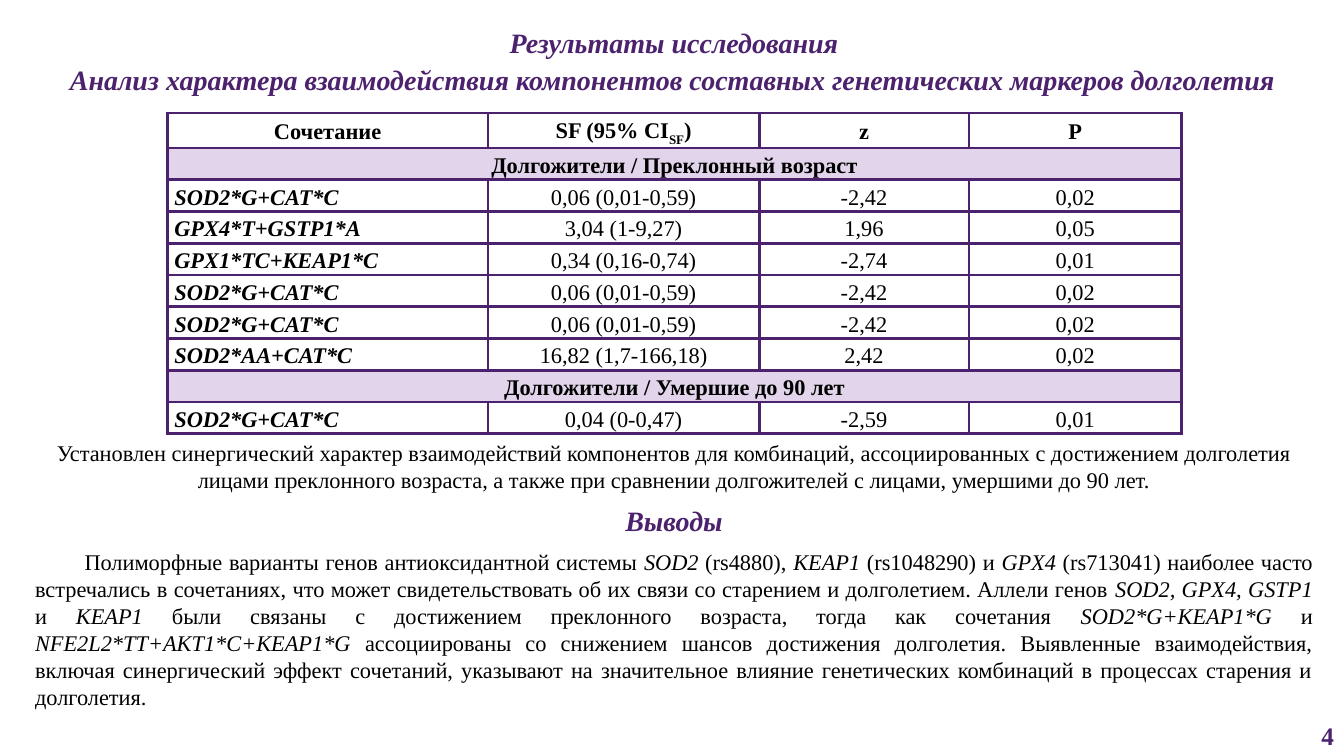
from itertools import cycle

from lxml import etree
from pptx import Presentation
from pptx.dml.color import RGBColor
from pptx.enum import text as t
from pptx.oxml import ns
from pptx.util import Inches, Pt

COLORS = {"accent": "4C216D", "band": "70319F", "ink": "000000"}
FONT = "Times New Roman"
CENTER, LEFT, RIGHT, JUSTIFY = (
    t.PP_ALIGN.CENTER, t.PP_ALIGN.LEFT, t.PP_ALIGN.RIGHT, t.PP_ALIGN.JUSTIFY)
TOP, MIDDLE = t.MSO_ANCHOR.TOP, t.MSO_ANCHOR.MIDDLE

MARGIN, BODY_WIDTH = 0.25, 12.87
COLUMN_WIDTHS = [3.18, 2.69, 2.08, 2.11]
ROW_HEIGHT = 0.315
BORDER_WIDTH = 2.25

HEADER = ["Сочетание", "SF (95% CI", "z", "P"]
GROUPS = [
    ("Долгожители / Преклонный возраст", [
        ("SOD2*G+CAT*C", "0,06 (0,01-0,59)", "-2,42", "0,02"),
        ("GPX4*T+GSTP1*A", "3,04 (1-9,27)", "1,96", "0,05"),
        ("GPX1*TC+KEAP1*C", "0,34 (0,16-0,74)", "-2,74", "0,01"),
        ("SOD2*G+CAT*C", "0,06 (0,01-0,59)", "-2,42", "0,02"),
        ("SOD2*G+CAT*C", "0,06 (0,01-0,59)", "-2,42", "0,02"),
        ("SOD2*AA+CAT*C", "16,82 (1,7-166,18)", "2,42", "0,02"),
    ]),
    ("Долгожители / Умершие до 90 лет", [
        ("SOD2*G+CAT*C", "0,04 (0-0,47)", "-2,59", "0,01"),
    ]),
]

SYNERGY = ("Установлен синергический характер взаимодействий компонентов для "
           "комбинаций, ассоциированных с достижением долголетия лицами "
           "преклонного возраста, а также при сравнении долгожителей с лицами, "
           "умершими до 90 лет.")

# Upright and italic pieces alternate
CONCLUSIONS = [
    "Полиморфные варианты генов антиоксидантной системы ", "SOD2",
    " (rs4880), ", "KEAP1", " (rs1048290) и ", "GPX4",
    " (rs713041) наиболее часто встречались в сочетаниях, что может "
    "свидетельствовать об их связи со старением и долголетием. Аллели генов ",
    "SOD2, GPX4, GSTP1 ", "и", " KEAP1",
    " были связаны с достижением преклонного возраста, тогда как сочетания ",
    "SOD2*G+KEAP1*G ", "и", " NFE2L2*TT+AKT1*C+KEAP1*G",
    " ассоциированы со снижением шансов достижения долголетия. Выявленные "
    "взаимодействия, включая синергический эффект сочетаний, указывают на "
    "значительное влияние генетических комбинаций в процессах старения и "
    "долголетия. ",
]


def add_run(paragraph, words, size=16, color="ink", bold=False, italic=False):
    run = paragraph.add_run()
    run.text = words
    font = run.font
    font.name, font.size, font.bold, font.italic = FONT, Pt(size), bold, italic
    font.color.rgb = RGBColor.from_string(COLORS[color])
    return run


def add_text_area(slide, box, align, anchor=TOP):
    frame = slide.shapes.add_textbox(*map(Inches, box)).text_frame
    frame.word_wrap = True
    frame.vertical_anchor = anchor
    paragraph = frame.paragraphs[0]
    paragraph.alignment = align
    return paragraph


def add_heading(slide, box, words, anchor=MIDDLE, spacing=0.9):
    heading = add_text_area(slide, box, CENTER, anchor)
    heading.line_spacing = spacing
    add_run(heading, words, 20, "accent", bold=True, italic=True)


def style_cell(cell, banded):
    cell.margin_left = cell.margin_right = Inches(0.07)
    cell.margin_top = cell.margin_bottom = 0
    cell.vertical_anchor = MIDDLE
    properties = cell._tc.get_or_add_tcPr()
    if banded:
        cell.fill.solid()
        cell.fill.fore_color.rgb = RGBColor.from_string(COLORS["band"])
        tint = properties.find(".//" + ns.qn("a:srgbClr"))
        etree.SubElement(tint, ns.qn("a:alpha"), val="20000")
    else:
        cell.fill.background()
    # Borders come before the fill
    for position, side in enumerate(("lnL", "lnR", "lnT", "lnB")):
        border = etree.Element(ns.qn("a:" + side), w=str(Pt(BORDER_WIDTH)))
        line_fill = etree.SubElement(border, ns.qn("a:solidFill"))
        etree.SubElement(line_fill, ns.qn("a:srgbClr"), val=COLORS["accent"])
        properties.insert(position, border)


def fill_cell(cell, words, align=CENTER, **style):
    paragraph = cell.text_frame.paragraphs[0]
    paragraph.alignment = align
    paragraph.line_spacing = 1.15
    add_run(paragraph, words, **style)
    return paragraph


def add_marker_table(slide, left, top):
    row_count = 1 + sum(1 + len(records) for _, records in GROUPS)
    table = slide.shapes.add_table(
        row_count, len(COLUMN_WIDTHS), Inches(left), Inches(top),
        Inches(sum(COLUMN_WIDTHS)), Inches(ROW_HEIGHT * row_count)).table
    table.first_row = table.horz_banding = False
    for column, width in zip(table.columns, COLUMN_WIDTHS):
        column.width = Inches(width)

    # Header
    for column, title in enumerate(HEADER):
        style_cell(table.cell(0, column), banded=False)
        paragraph = fill_cell(table.cell(0, column), title, bold=True)
        if column == 1:
            subscript = add_run(paragraph, "SF", bold=True)
            subscript.font._element.set("baseline", "-25000")
            add_run(paragraph, ")", bold=True)

    # Comparison groups
    row = 1
    for group, records in GROUPS:
        for column in range(len(COLUMN_WIDTHS)):
            style_cell(table.cell(row, column), banded=True)
        table.cell(row, 0).merge(table.cell(row, len(COLUMN_WIDTHS) - 1))
        fill_cell(table.cell(row, 0), group, bold=True)
        for row, record in enumerate(records, row + 1):
            for column, value in enumerate(record):
                genes = column == 0
                style_cell(table.cell(row, column), banded=False)
                fill_cell(table.cell(row, column), value,
                          LEFT if genes else CENTER, bold=genes, italic=genes)
        row += 1


def add_conclusions(slide, box):
    conclusions = add_text_area(slide, box, JUSTIFY)
    conclusions._p.get_or_add_pPr().set("indent", str(Inches(0.49)))
    for words, italic in zip(CONCLUSIONS, cycle((False, True))):
        add_run(conclusions, words, italic=italic)


def main():
    deck = Presentation()
    deck.slide_width, deck.slide_height = Inches(13.33), Inches(7.5)
    slide = deck.slides.add_slide(deck.slide_layouts[6])

    # Page number
    page = add_text_area(slide, (10.33, 7.1, 3, 0.4), RIGHT, MIDDLE)
    add_run(page, "4", 18, "accent", bold=True)

    # Results
    add_heading(slide, (MARGIN, 0.24, BODY_WIDTH, 0.41), "Результаты исследования")
    add_heading(slide, (0.27, 0.57, BODY_WIDTH, 0.44),
                "Анализ характера взаимодействия компонентов составных "
                "генетических маркеров долголетия ", TOP, 1.0)
    add_marker_table(slide, 1.66, 1.12)
    synergy = add_text_area(slide, (MARGIN, 4.31, BODY_WIDTH, 0.64), CENTER)
    add_run(synergy, SYNERGY)

    # Conclusions
    add_heading(slide, (MARGIN, 4.98, BODY_WIDTH, 0.41), "Выводы")
    add_conclusions(slide, (MARGIN, 5.39, BODY_WIDTH, 1.72))

    deck.save("out.pptx")


if __name__ == "__main__":
    main()
